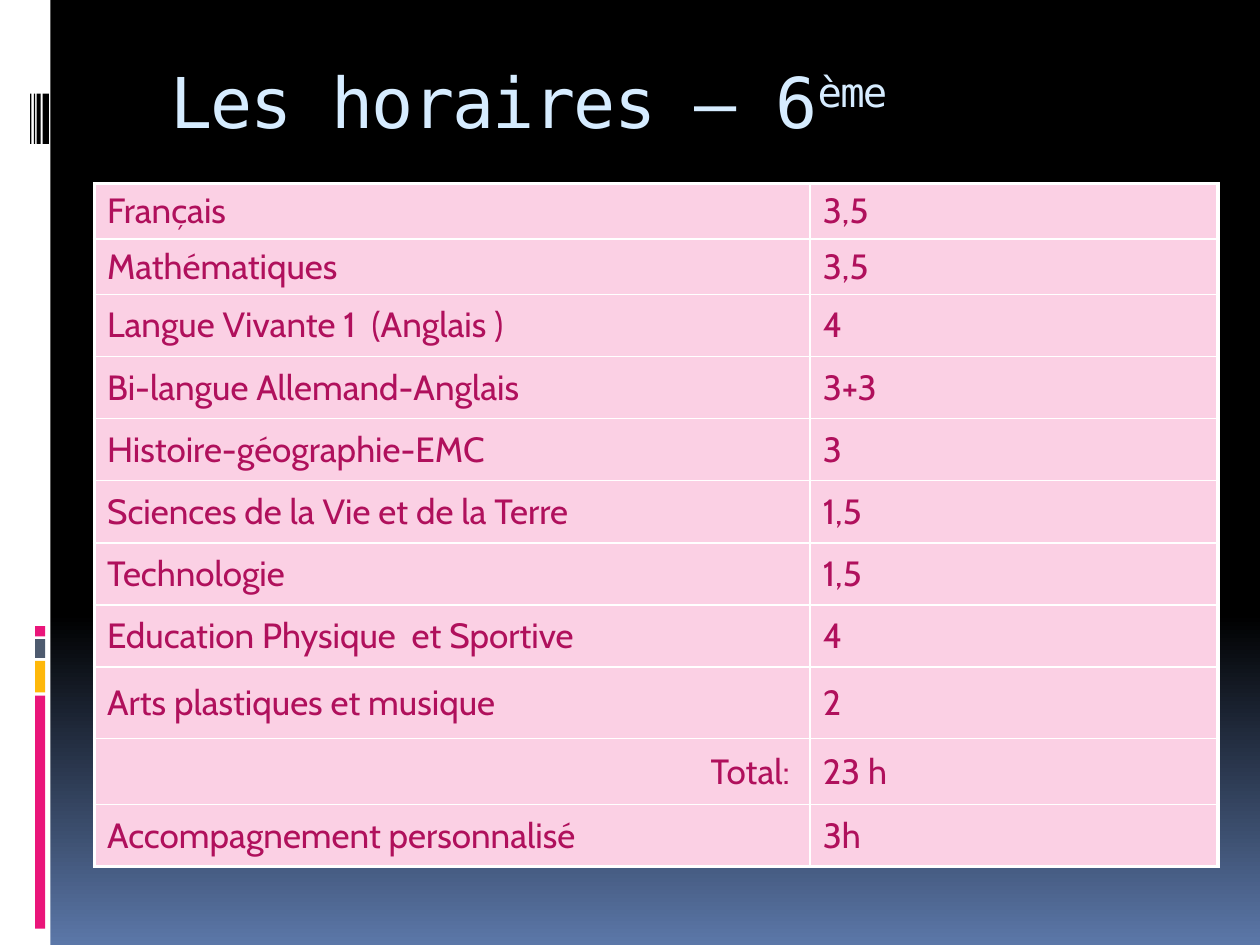
from dataclasses import dataclass

from lxml.etree import SubElement
from pptx import Presentation
from pptx.dml.color import RGBColor
from pptx.enum.shapes import MSO_SHAPE as SHAPE
from pptx.enum.text import MSO_ANCHOR as ANCHOR, PP_ALIGN as ALIGN
from pptx.oxml.ns import qn
from pptx.util import Pt


@dataclass(frozen=True)
class Theme:
    white: str = "FFFFFF"
    black: str = "000000"
    blue: str = "5B77A8"
    pink: str = "EA157A"
    amber: str = "FEB80A"
    slate: str = "4E5B6F"
    title: str = "D6ECFF"
    cell: str = "FBD0E4"
    text: str = "B0105C"
    title_font: str = "DejaVu Sans Mono"
    body_font: str = "Cabin"
    title_size: float = 40
    body_size: float = 20
    inner_line: float = 1
    outer_line: float = 2.25


T = Theme()

HOURS = [
    ("Français", "3,5"),
    ("Mathématiques", "3,5"),
    ("Langue Vivante 1  (Anglais )", "4"),
    ("Bi-langue Allemand-Anglais", "3+3"),
    ("Histoire-géographie-EMC", "3"),
    ("Sciences de la Vie et de la Terre", "1,5"),
    ("Technologie", "1,5"),
    ("Education Physique  et Sportive", "4"),
    ("Arts plastiques et musique", "2"),
    ("Total: ", "23 h"),
    ("Accompagnement personnalisé", "3h"),
]
COL_WIDTHS = [409, 233]
ROW_HEIGHTS = [31.6] * 2 + [35.5] * 6 + [40.9, 37.7, 35.5]


def add_text(p, text, size, font, color, spacing=None, baseline=None):
    r = p.add_run()
    r.text = text
    r.font.size = Pt(size)
    r.font.name = font
    r.font.color.rgb = RGBColor.from_string(color)
    props = r.font._element
    if spacing is not None:
        props.set("spc", str(int(spacing * 100)))
    if baseline is not None:
        props.set("baseline", str(baseline * 1000))


def add_bar(slide, left, top, width, height, color):
    s = slide.shapes.add_shape(
        SHAPE.RECTANGLE, Pt(left), Pt(top), Pt(width), Pt(height))
    s.shadow.inherit = False
    s.fill.solid()
    s.fill.fore_color.rgb = RGBColor.from_string(color)
    s.line.fill.background()


def set_background(slide):
    fill = slide.background.fill
    fill.gradient()
    fill.gradient_angle = 270
    for stop, position, color in zip(
            fill.gradient_stops, (0.65, 1), (T.black, T.blue)):
        stop.position = position
        stop.color.rgb = RGBColor.from_string(color)


def add_sidebar(slide, left, top, width, height):
    """White band with a barcode at the top and coloured blocks below."""
    add_bar(slide, left, top, width, height, T.white)
    for y, h, color in [(357.8, 5.8, T.pink), (365.2, 10.8, T.slate),
                        (377.7, 18, T.amber), (397.5, 133.2, T.pink)]:
        add_bar(slide, left + 20, top + y, 5.8, h, color)
    for x, w in [(17.2, 0.7), (19.4, 0.7), (21, 2.2), (24.4, 3.6)]:
        add_bar(slide, left + x, top + 53.5, w, 28.8, T.black)


def place_title(slide, left, top, width, height):
    s = slide.shapes.title
    s.left, s.top, s.width, s.height = map(Pt, (left, top, width, height))
    tf = s.text_frame
    tf.word_wrap = True
    tf.vertical_anchor = ANCHOR.TOP
    tf.margin_top = Pt(7.6)
    p = tf.paragraphs[0]
    p.alignment = ALIGN.LEFT
    style = dict(size=T.title_size, font=T.title_font, color=T.title, spacing=-1)
    add_text(p, "\tLes horaires – 6", **style)
    add_text(p, "ème", baseline=30, **style)


def set_borders(cell, outer_sides):
    """Draw white borders, thicker on the sides at the edge of the table."""
    props = cell._tc.get_or_add_tcPr()
    for i, side in enumerate("LRTB"):
        width = T.outer_line if side in outer_sides else T.inner_line
        ln = SubElement(props, qn(f"a:ln{side}"), w=str(Pt(width)))
        fill = SubElement(ln, qn("a:solidFill"))
        SubElement(fill, qn("a:srgbClr"), val=T.white)
        props.insert(i, ln)


def add_hours_table(slide, left, top, width, height):
    rows, cols = len(HOURS), len(COL_WIDTHS)
    table = slide.shapes.add_table(
        rows, cols, Pt(left), Pt(top), Pt(width), Pt(height)).table
    table.first_row = table.horz_banding = False
    for column, w in zip(table.columns, COL_WIDTHS):
        column.width = Pt(w * width / sum(COL_WIDTHS))
    for row, h in zip(table.rows, ROW_HEIGHTS):
        row.height = Pt(h * height / sum(ROW_HEIGHTS))

    for i, values in enumerate(HOURS):
        for j, value in enumerate(values):
            cell = table.cell(i, j)
            cell.vertical_anchor = ANCHOR.MIDDLE
            cell.fill.solid()
            cell.fill.fore_color.rgb = RGBColor.from_string(T.cell)
            at_edge = {"L": j == 0, "R": j == cols - 1,
                       "T": i == 0, "B": i == rows - 1}
            set_borders(cell, [side for side, edge in at_edge.items() if edge])
            p = cell.text_frame.paragraphs[0]
            p.alignment = ALIGN.RIGHT if value.startswith("Total") else ALIGN.LEFT
            add_text(p, value, T.body_size, T.body_font, T.text)


def main():
    prs = Presentation()
    prs.slide_width, prs.slide_height = Pt(720), Pt(540)
    slide = prs.slides.add_slide(prs.slide_layouts[5])
    set_background(slide)
    add_sidebar(slide, 0, 0, 28.8, 540)
    place_title(slide, 54, 26, 612, 72)
    add_hours_table(slide, 54, 105, sum(COL_WIDTHS), sum(ROW_HEIGHTS))
    prs.save("out.pptx")


if __name__ == "__main__":
    main()
